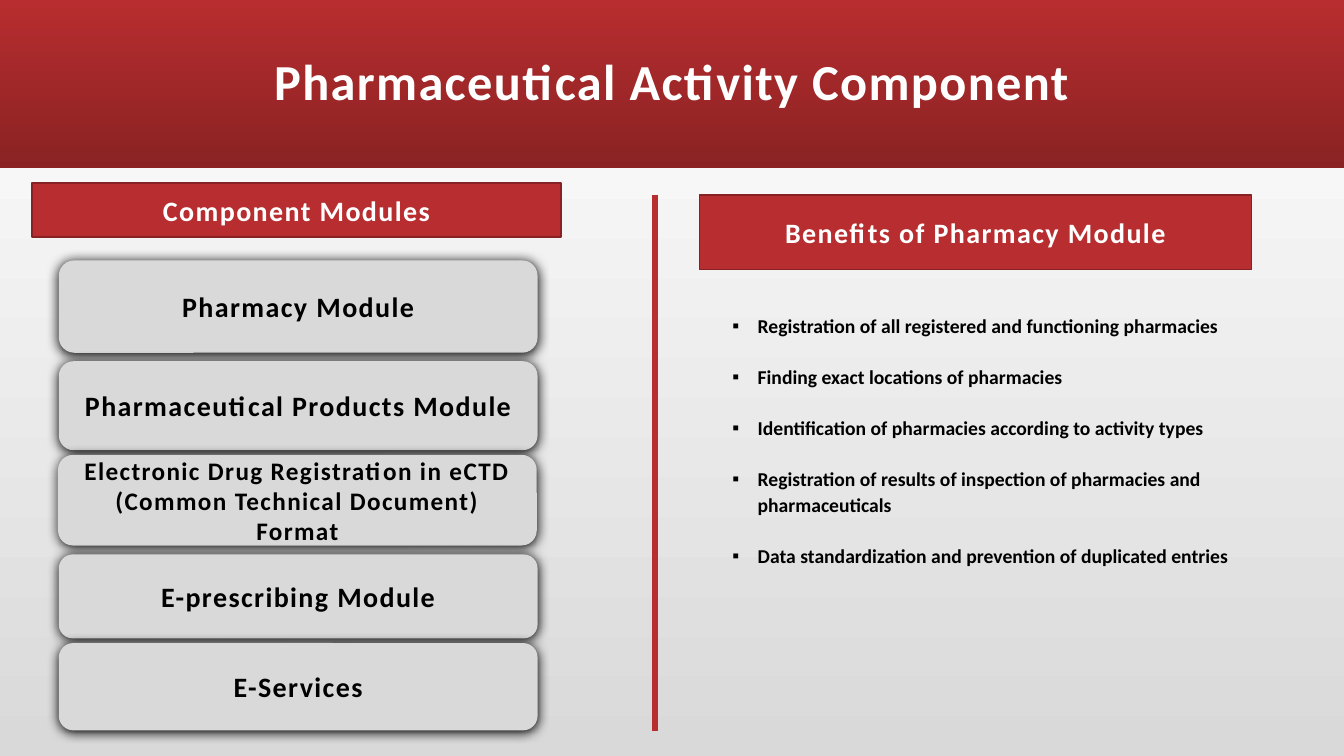
from dataclasses import dataclass

from lxml.etree import SubElement
from pptx import Presentation
from pptx.dml.color import RGBColor
from pptx.dml.fill import FillFormat
from pptx.enum.shapes import MSO_CONNECTOR, MSO_SHAPE
from pptx.enum.text import MSO_ANCHOR, MSO_AUTO_SIZE, PP_ALIGN
from pptx.oxml.ns import qn
from pptx.shapes.autoshape import Shape
from pptx.slide import Slide
from pptx.text.text import TextFrame
from pptx.util import Emu, Inches, Pt

RED = RGBColor(0xB8, 0x2D, 0x2F)
DARK_RED = RGBColor(0x8A, 0x22, 0x23)
BORDER_RED = RGBColor(0x88, 0x21, 0x23)
GREY = RGBColor(0xD9, 0xD9, 0xD9)
WHITE = RGBColor(0xFF, 0xFF, 0xFF)
BLACK = RGBColor(0, 0, 0)
FONT = "Calibri"

# The slide is a grid of square cells
COLUMNS, ROWS = 160, 90
CELL = Inches(7.5) / ROWS


@dataclass(frozen=True)
class Box:
    column: float
    row: float
    columns: float
    rows: float

    def place(self) -> tuple[Emu, Emu, Emu, Emu]:
        return (cells(self.column), cells(self.row),
                cells(self.columns), cells(self.rows))


@dataclass(frozen=True)
class Label:
    text: str
    box: Box
    size: int = 20


HEADINGS = [
    Label("Component Modules", Box(3.8, 21.8, 63, 6.4)),
    Label("Benefits of Pharmacy Module", Box(83.25, 23.2, 65.75, 8.9)),
]
MODULES = [
    Label("Pharmacy Module", Box(7, 31, 57, 11)),
    Label("Pharmaceutical Products Module", Box(7, 43, 57, 10.6)),
    Label("Electronic Drug Registration in eCTD (Common Technical Document) Format",
          Box(6.9, 54.15, 57, 10.8), 18),
    Label("E-prescribing Module", Box(7, 66, 57, 10)),
    Label("E-Services", Box(7, 76.55, 57, 10.4)),
]
BENEFITS = [
    "Registration of all registered and functioning pharmacies",
    "Finding exact locations of pharmacies",
    "Identification of pharmacies according to activity types",
    "Registration of results of inspection of pharmacies and pharmaceuticals",
    "Data standardization and prevention of duplicated entries",
]


def cells(count: float) -> Emu:
    return Emu(round(count * CELL))


def place(shape: Shape, box: Box) -> None:
    shape.left, shape.top, shape.width, shape.height = box.place()


def fill_gradient(fill: FillFormat, start: RGBColor, end: RGBColor, angle: int) -> None:
    fill.gradient()
    fill.gradient_angle = angle
    for stop, color, position in zip(fill.gradient_stops, (start, end), (0, 1)):
        stop.color.rgb = color
        stop.position = position


def format_runs(text_frame: TextFrame, size: int, color: RGBColor, spacing: int = 0) -> None:
    for paragraph in text_frame.paragraphs:
        for run in paragraph.runs:
            run.font.name = FONT
            run.font.size = Pt(size)
            run.font.bold = True
            run.font.color.rgb = color
            run.font._element.set("spc", str(spacing * 100))


def center_text(text_frame: TextFrame, text: str, size: int, color: RGBColor) -> None:
    text_frame.text = text
    text_frame.word_wrap = True
    text_frame.auto_size = MSO_AUTO_SIZE.NONE
    text_frame.vertical_anchor = MSO_ANCHOR.MIDDLE
    text_frame.paragraphs[0].alignment = PP_ALIGN.CENTER
    format_runs(text_frame, size, color, spacing=1)


def add_label(slide: Slide, label: Label, preset: MSO_SHAPE,
              fill: RGBColor, color: RGBColor) -> Shape:
    shape = slide.shapes.add_shape(preset, *label.box.place())
    shape.shadow.inherit = False
    shape.fill.solid()
    shape.fill.fore_color.rgb = fill
    center_text(shape.text_frame, label.text, label.size, color)
    return shape


def add_heading(slide: Slide, label: Label) -> None:
    shape = add_label(slide, label, MSO_SHAPE.RECTANGLE, RED, WHITE)
    shape.line.color.rgb = BORDER_RED
    shape.line.width = Pt(1)


def add_module(slide: Slide, label: Label) -> None:
    shape = add_label(slide, label, MSO_SHAPE.ROUNDED_RECTANGLE, GREY, BLACK)
    shape.line.fill.background()
    effects = shape._element.spPr.find(qn("a:effectLst"))
    shadow = SubElement(effects, qn("a:outerShdw"), blurRad=str(Pt(8.5)),
                        dist=str(Pt(1)), dir="5400000", algn="t", rotWithShape="0")
    SubElement(shadow, qn("a:srgbClr"), val=str(BLACK))


def write_benefits(body: Shape) -> None:
    place(body, Box(86, 36.5, 62, 48.5))
    text_frame = body.text_frame
    text_frame.text = "\n".join(BENEFITS)
    text_frame.word_wrap = True
    text_frame.auto_size = MSO_AUTO_SIZE.NONE
    for paragraph in text_frame.paragraphs:
        paragraph.line_spacing = 1.1
        paragraph.space_before = Pt(18)
        properties = paragraph._p.get_or_add_pPr()
        properties.set("marL", str(Inches(0.25)))
        properties.set("indent", str(Inches(-0.25)))
        SubElement(properties, qn("a:buFont"), typeface="Arial")
        SubElement(properties, qn("a:buChar"), char="▪")
    format_runs(text_frame, 14, BLACK)


def write_title(slide: Slide) -> None:
    title = slide.shapes.title
    place(title, Box(14, 0, 132, 20))
    center_text(title.text_frame, "Pharmaceutical Activity Component", 36, WHITE)
    title.text_frame.paragraphs[0].line_spacing = 0.9

    # Red band behind the title
    band = slide.shapes.add_shape(MSO_SHAPE.RECTANGLE, *Box(0, 0, COLUMNS, 20).place())
    band.shadow.inherit = False
    band.line.fill.background()
    fill_gradient(band.fill, RED, DARK_RED, 270)
    title._element.addprevious(band._element)


def add_divider(slide: Slide) -> None:
    line = slide.shapes.add_connector(
        MSO_CONNECTOR.STRAIGHT, cells(78), cells(23.2), cells(78), cells(87))
    line.line.color.rgb = RED
    line.line.width = Pt(4)
    SubElement(line._element.spPr, qn("a:effectLst"))


def main() -> None:
    presentation = Presentation()
    presentation.slide_width = cells(COLUMNS)
    presentation.slide_height = cells(ROWS)
    slide = presentation.slides.add_slide(presentation.slide_layouts[1])
    fill_gradient(slide.background.fill, GREY, WHITE, 90)

    write_title(slide)
    write_benefits(slide.placeholders[1])
    for heading in HEADINGS:
        add_heading(slide, heading)
    for module in MODULES:
        add_module(slide, module)
    add_divider(slide)

    presentation.save("out.pptx")


if __name__ == "__main__":
    main()
